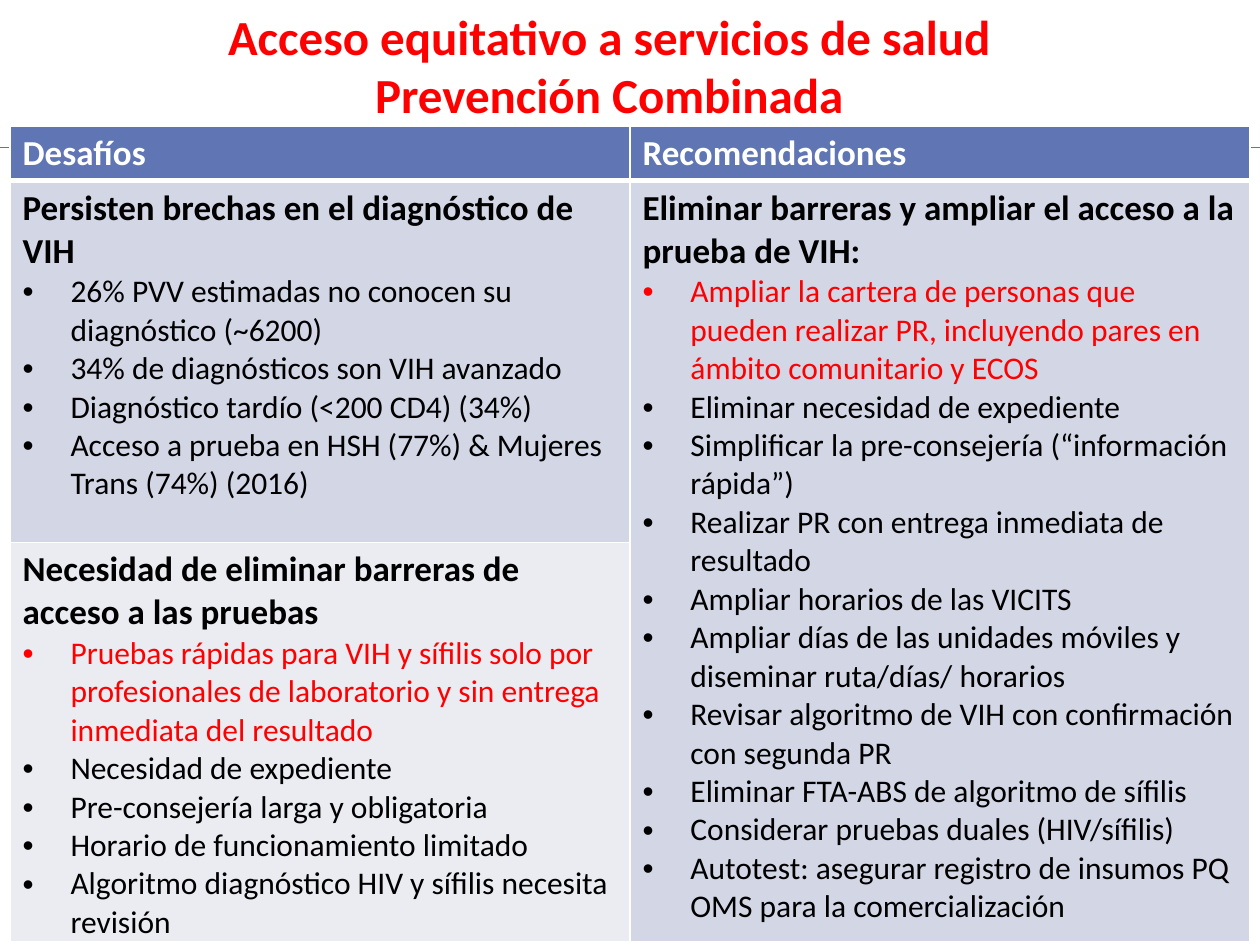
from lxml.etree import SubElement
from pptx import Presentation
from pptx.dml.color import RGBColor
from pptx.enum.shapes import MSO_CONNECTOR
from pptx.enum.text import PP_ALIGN
from pptx.oxml.ns import qn
from pptx.util import Inches, Pt


def color(value):
    return RGBColor.from_string(value)


def write(para, text, tint, **values):
    span = para.add_run()
    span.text = text
    span.font.color.rgb = color(tint)
    for name, value in ({"name": "Calibri", "size": Pt(20), "bold": True} | values).items():
        setattr(span.font, name, value)


RED, BLACK, WHITE = "FF0000", "000000", "FFFFFF"

deck = Presentation()
deck.slide_width, deck.slide_height = Inches(10), Inches(7.5)
page = deck.slides.add_slide(deck.slide_layouts[6])

title = page.shapes.add_textbox(Inches(0), Inches(0), Inches(9.67), Inches(1.04))
title.text_frame.word_wrap = True
lines = ["Acceso equitativo a servicios de salud", "Prevención Combinada"]
for index, text in enumerate(lines):
    para = title.text_frame.add_paragraph() if index else title.text_frame.paragraphs[0]
    para.alignment = PP_ALIGN.CENTER
    write(para, text, RED, size=Pt(28))

rule = page.shapes.add_connector(
    MSO_CONNECTOR.STRAIGHT, Inches(-0.03), Inches(1.17), Inches(10.03), Inches(1.17)
)
rule.line.color.rgb = color("5C72B2")
rule.line.width = Pt(0.75)
SubElement(rule._element.spPr, qn("a:effectLst"))

table = page.shapes.add_table(
    3, 2, Inches(0.08), Inches(1), Inches(9.83), Inches(6.47)
).table
for column in table.columns:
    column.width = Inches(4.92)
for row, height in zip(table.rows, [0.43, 2.87, 3.17]):
    row.height = Inches(height)

for row, fill in enumerate(["6076B4", "D2D6E5", "EAECF2"]):
    for column in range(2):
        cell = table.cell(row, column)
        properties = cell._tc.get_or_add_tcPr()
        for side in "LRTB":
            heavy = (row, side) in [(0, "B"), (1, "T")]
            border = SubElement(properties, qn(f"a:ln{side}"), w=str(Pt(3 if heavy else 1)))
            paint = SubElement(border, qn("a:solidFill"))
            SubElement(paint, qn("a:srgbClr"), val=WHITE)
        cell.fill.solid()
        cell.fill.fore_color.rgb = color(fill)
table.cell(1, 1).merge(table.cell(2, 1))

for column, heading in enumerate(["Desafíos", "Recomendaciones"]):
    write(table.cell(0, column).text_frame.paragraphs[0], heading, WHITE)

sections = [
    (1, 0, "Persisten brechas en el diagnóstico de VIH", [
        ("26% PVV estimadas no conocen su diagnóstico (~6200)", BLACK),
        ("34% de diagnósticos son VIH avanzado", BLACK),
        ("Diagnóstico tardío (<200 CD4) (34%)", BLACK),
        ("Acceso a prueba en HSH (77%) & Mujeres Trans (74%) (2016)", BLACK),
    ]),
    (1, 1, "Eliminar barreras y ampliar el acceso a la prueba de VIH:", [
        ("Ampliar la cartera de personas que pueden realizar PR, incluyendo pares en "
         "ámbito comunitario y ECOS", RED),
        ("Eliminar necesidad de expediente", BLACK),
        ("Simplificar la pre-consejería (“información rápida”)", BLACK),
        ("Realizar PR con entrega inmediata de resultado", BLACK),
        ("Ampliar horarios de las VICITS", BLACK),
        ("Ampliar días de las unidades móviles y diseminar ruta/días/ horarios", BLACK),
        ("Revisar algoritmo de VIH con confirmación con segunda PR", BLACK),
        ("Eliminar FTA-ABS de algoritmo de sífilis", BLACK),
        ("Considerar pruebas duales (HIV/sífilis)", BLACK),
        ("Autotest: asegurar registro de insumos PQ OMS para la comercialización", BLACK),
    ]),
    (2, 0, "Necesidad de eliminar barreras de acceso a las pruebas", [
        ("Pruebas rápidas para VIH y sífilis solo por profesionales de laboratorio y "
         "sin entrega inmediata del resultado", RED),
        ("Necesidad de expediente", BLACK),
        ("Pre-consejería larga y obligatoria", BLACK),
        ("Horario de funcionamiento limitado", BLACK),
        ("Algoritmo diagnóstico HIV y sífilis necesita revisión", BLACK),
    ]),
]
for row, column, heading, items in sections:
    frame = table.cell(row, column).text_frame
    write(frame.paragraphs[0], heading, BLACK)
    for text, tint in items:
        para = frame.add_paragraph()
        layout = para._p.get_or_add_pPr()
        layout.set("marL", str(Inches(0.38)))
        layout.set("indent", str(Inches(-0.38)))
        SubElement(layout, qn("a:buFont"), typeface="Arial")
        SubElement(layout, qn("a:buChar"), char="•")
        write(para, text, tint, size=Pt(18), bold=False)

deck.save("out.pptx")
